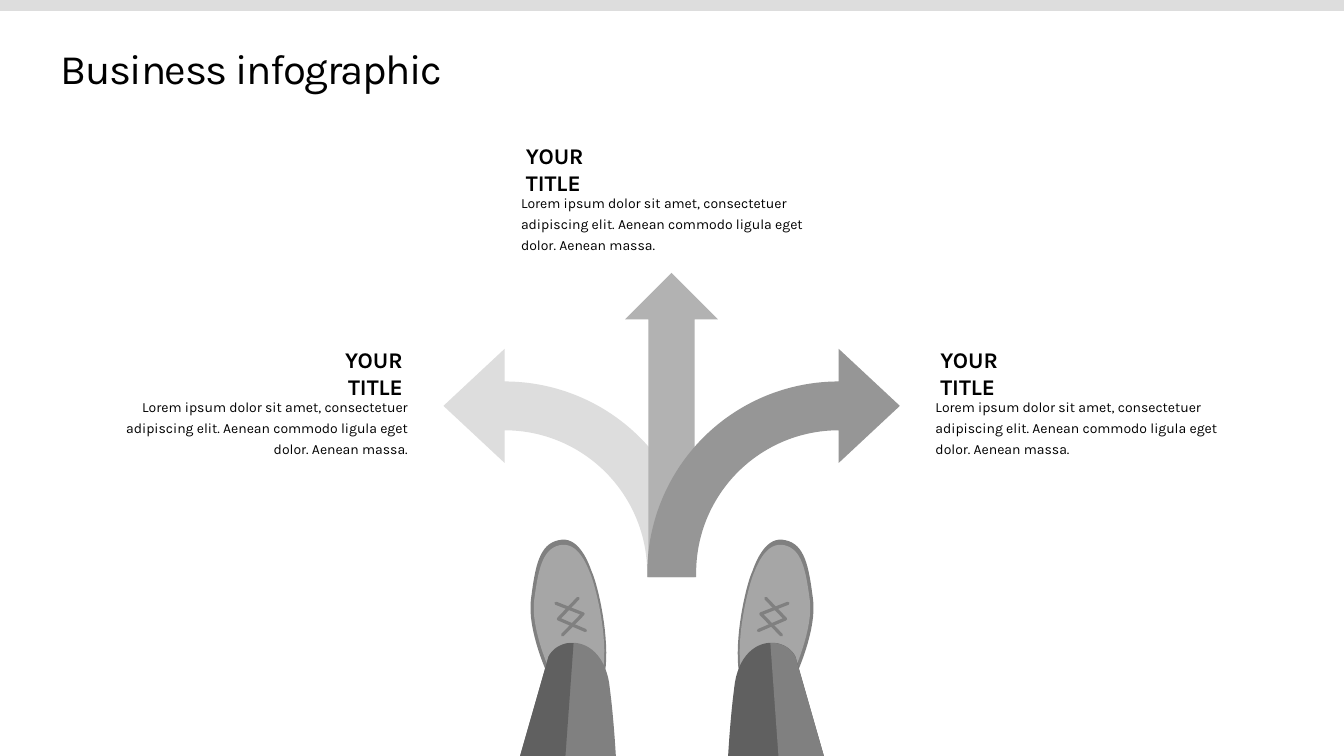
import pptx
import pptx.dml.color
import pptx.enum.shapes
import pptx.enum.text
import pptx.util
from lxml import etree

Pt = pptx.util.Pt
RGBColor = pptx.dml.color.RGBColor
SHAPE = pptx.enum.shapes.MSO_SHAPE
ALIGN = pptx.enum.text.PP_ALIGN
ANCHOR = pptx.enum.text.MSO_ANCHOR
A = "{http://schemas.openxmlformats.org/drawingml/2006/main}"

BLACK = RGBColor(0, 0, 0)
PALE = RGBColor(0xDD, 0xDD, 0xDD)
SILVER = RGBColor(0xB2, 0xB2, 0xB2)
STEEL = RGBColor(0x96, 0x96, 0x96)
LEATHER = RGBColor(0xA6, 0xA6, 0xA6)
GREY = RGBColor(0x80, 0x80, 0x80)
DARK = RGBColor(0x60, 0x60, 0x60)

WIDTH, HEIGHT = 960, 540
BODY = ("Lorem ipsum dolor sit amet, consectetuer adipiscing elit. "
        "Aenean commodo ligula eget dolor. Aenean massa.")
BENT = (0.214, 0.25, 0.268, 0.841)

# Left foot outlines: a start point, then lines (x, y) or Bézier curves (two controls, end).
SOLE = [(392.4, 484.6),
        (392.4, 484.6, 375.8, 450, 379.4, 427),
        (382.3, 404.6, 385.2, 388.8, 398.9, 385.9),
        (412.6, 382.3, 419.8, 400.3, 422.6, 408.2),
        (426.2, 415.4, 434.9, 450, 432.7, 475.9),
        (430.6, 501.8, 392.4, 484.6, 392.4, 484.6)]
UPPER = [(393.8, 481.7),
         (393.8, 481.7, 378.7, 449.3, 381.6, 428.4),
         (384.5, 406.8, 387.4, 392.4, 399.6, 389.5),
         (412.6, 386.6, 419, 403.2, 421.9, 410.4),
         (424.8, 417.6, 433.4, 449.3, 431.3, 473.8),
         (429.1, 498.2, 393.8, 481.7, 393.8, 481.7)]
LACES = [[(397.1, 430.9), (416.5, 438.5), (401.8, 453.6)],
         [(413, 427.3), (398.9, 442.1), (418.3, 450.4)]]
TROUSER = [(371.5, 540), (391.7, 469.4),
           (391.7, 469.4, 394.6, 461.5, 405.4, 459.4),
           (419.8, 457.2, 433.4, 468.7, 435.6, 491.8),
           (438.5, 514.1, 439.9, 540, 439.9, 540)]
OUTER_HALF = [(403.9, 540), (409.7, 459.4), (405.4, 459.4),
              (394.6, 461.5, 391.7, 469.4, 391.7, 469.4), (371.5, 540)]


def flatten(outline, steps=16):
    """Turn lines and Bézier curves into a list of points."""
    points = [outline[0]]
    for seg in outline[1:]:
        if len(seg) == 2:
            points.append(seg)
            continue
        x0, y0 = points[-1]
        x1, y1, x2, y2, x3, y3 = seg
        for i in range(1, steps + 1):
            t = i / steps
            a, b, c, d = (1 - t) ** 3, 3 * t * (1 - t) ** 2, 3 * t * t * (1 - t), t ** 3
            points.append((a * x0 + b * x1 + c * x2 + d * x3,
                           a * y0 + b * y1 + c * y2 + d * y3))
    return points


class Deck:
    font = "Karla"

    def __init__(self):
        self.prs = pptx.Presentation()
        self.prs.slide_width, self.prs.slide_height = Pt(WIDTH), Pt(HEIGHT)
        self.s = self.prs.slides.add_slide(self.prs.slide_layouts[5])

    def set_text(self, sp, text, size, bold=False, align=ALIGN.LEFT, anchor=ANCHOR.MIDDLE):
        tf = sp.text_frame
        tf.text = text
        tf.word_wrap = True
        tf.auto_size = pptx.enum.text.MSO_AUTO_SIZE.NONE
        tf.vertical_anchor = anchor
        p = tf.paragraphs[0]
        p.alignment = align
        r = p.runs[0]
        r.font.name, r.font.size, r.font.bold = self.font, Pt(size), bold
        r.font.color.rgb = BLACK
        return tf

    def title(self, text):
        sp = self.s.shapes.title
        sp.left, sp.top, sp.width, sp.height = Pt(36), Pt(25.2), Pt(888), Pt(46)
        tf = self.set_text(sp, text, 30)
        tf.paragraphs[0].runs[0]._r.get_or_add_rPr().set("spc", "-100")

    def shape(self, kind, x, y, w, h, color, adjustments=(), flip=False):
        sp = self.s.shapes.add_shape(kind, Pt(x), Pt(y), Pt(w), Pt(h))
        for i, value in enumerate(adjustments):
            sp.adjustments[i] = value
        if flip:
            sp.element.spPr.find(A + "xfrm").set("flipH", "1")
        self.paint(sp, color)

    def paint(self, sp, color):
        sp.shadow.inherit = False
        sp.fill.solid()
        sp.fill.fore_color.rgb = color
        sp.line.fill.background()

    def freeform(self, outline, mirror, closed=True):
        points = [(Pt(WIDTH - x if mirror else x), Pt(y)) for x, y in flatten(outline)]
        fb = self.s.shapes.build_freeform(*points[0])
        fb.add_line_segments(points[1:], close=closed)
        return fb.convert_to_shape()

    def lace(self, outline, mirror):
        sp = self.freeform(outline, mirror, closed=False)
        sp.shadow.inherit = False
        sp.fill.background()
        sp.line.color.rgb = GREY
        sp.line.width = Pt(2.3)
        ln = sp.element.spPr.find(A + "ln")
        ln.set("cap", "rnd")
        etree.SubElement(ln, A + "round")

    def foot(self, mirror):
        """Draw one shoe and trouser leg; the light falls from the right on both."""
        inner, outer = (DARK, GREY) if mirror else (GREY, DARK)
        for outline, color in ((SOLE, GREY), (UPPER, LEATHER)):
            self.paint(self.freeform(outline, mirror), color)
        for outline in LACES:
            self.lace(outline, mirror)
        for outline, color in ((TROUSER, inner), (OUTER_HALF, outer)):
            self.paint(self.freeform(outline, mirror), color)

    def caption(self, x, y, align=ALIGN.LEFT):
        """Place a heading over its text; x is the edge they are aligned to."""
        def box(top, w, h):
            left = x - w if align == ALIGN.RIGHT else x
            return self.s.shapes.add_textbox(Pt(left), Pt(top), Pt(w), Pt(h))

        self.set_text(box(y, 95, 26.6), "YOUR TITLE", 16, True, align)
        tf = self.set_text(box(y + 26.2, 222.5, 47.5), BODY, 10, False, align, ANCHOR.TOP)
        tf.margin_left = tf.margin_right = Pt(3.6)
        tf.margin_top = tf.margin_bottom = Pt(2.2)
        tf.paragraphs[0].line_spacing = Pt(15)


def main():
    deck = Deck()
    deck.shape(SHAPE.RECTANGLE, 0, 0, WIDTH, 7.8, PALE)
    deck.title("Business infographic")
    for mirror in (False, True):
        deck.foot(mirror)
    deck.shape(SHAPE.BENT_ARROW, 316.8, 249.2, 180.4, 163, PALE, BENT, flip=True)
    deck.shape(SHAPE.UP_ARROW, 446.6, 195, 66.2, 217.2, SILVER)
    deck.shape(SHAPE.BENT_ARROW, 462.4, 249.2, 180.4, 163, STEEL, BENT)
    deck.caption(664.6, 253.4)
    deck.caption(294.8, 253.4, ALIGN.RIGHT)
    deck.caption(368.6, 107.5)
    deck.prs.save("out.pptx")


if __name__ == "__main__":
    main()
